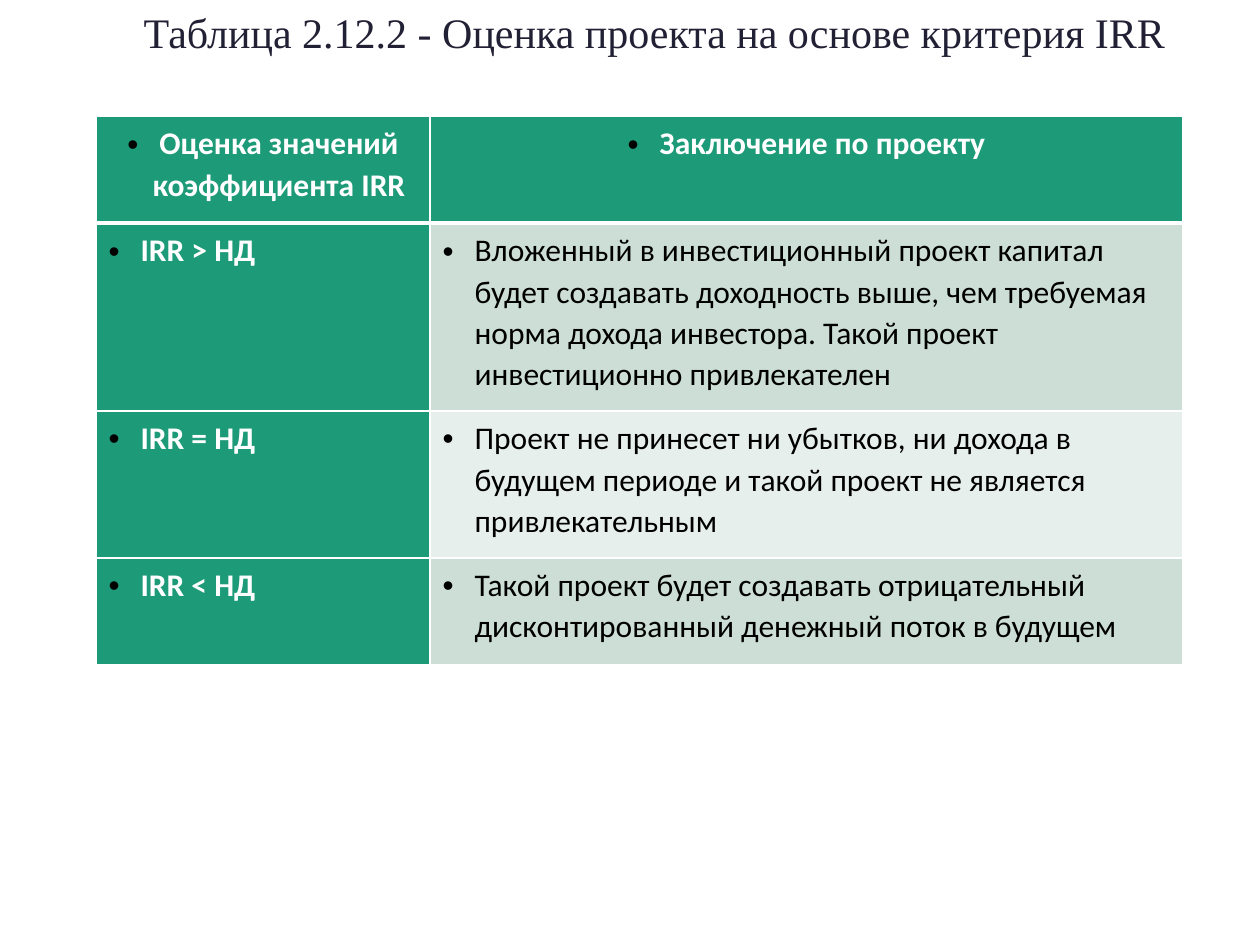
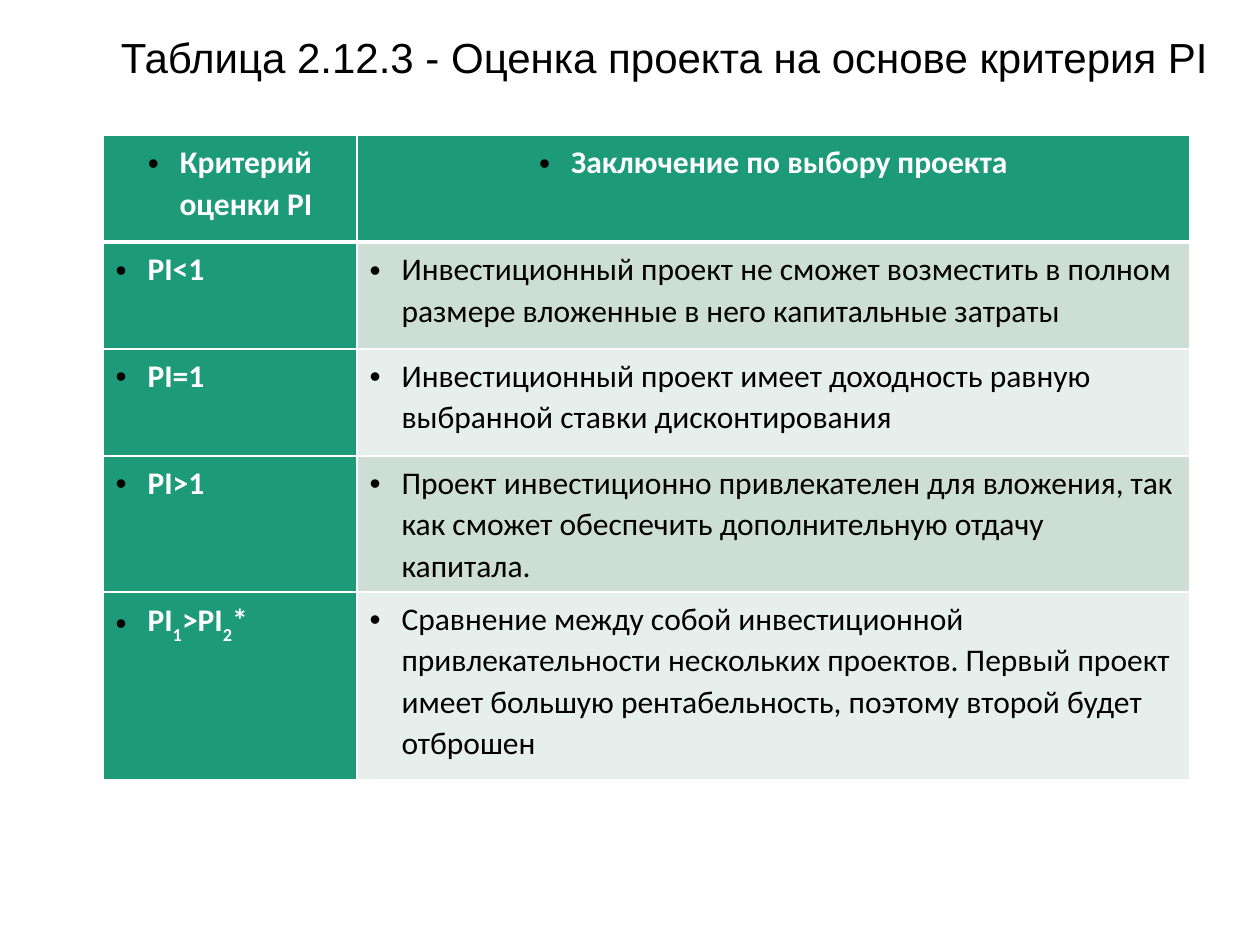
"""Build two slides with tables on judging a project by IRR and PI."""
from dataclasses import dataclass

from lxml.etree import SubElement
from pptx import Presentation
from pptx.dml.color import RGBColor
from pptx.enum.text import MSO_ANCHOR as Anchor, MSO_AUTO_SIZE as AutoSize, PP_ALIGN as Align
from pptx.oxml.ns import qn
from pptx.util import Emu, Pt

PX_PER_INCH = 126
TITLE_ONLY = 5
TITLE_HEIGHT = 63
BULLET_INDENT = 32
TABLE_FONT = "Calibri"
COLORS = {
    "white": "FFFFFF",
    "black": "000000",
    "ink": "212034",
    "green": "1D9A78",
    "band_dark": "CCDED6",
    "band_light": "E7EFEC",
}


@dataclass(frozen=True)
class Piece:
    text: str
    subscript: bool = False


@dataclass(frozen=True)
class Title:
    text: str
    left: int
    top: int
    width: int
    font: str
    color: str


@dataclass(frozen=True)
class Row:
    height: int
    criterion: tuple[Piece, ...]
    conclusion: str


@dataclass(frozen=True)
class CriterionTable:
    left: int
    top: int
    columns: tuple[int, int]
    rows: tuple[Row, ...]


def px(length: int) -> Emu:
    return Emu(round(length * 914400 / PX_PER_INCH))


def rgb(name: str) -> RGBColor:
    return RGBColor.from_string(COLORS[name])


def add_title(slide, title: Title) -> None:
    shape = slide.shapes.title
    shape.left, shape.top = px(title.left), px(title.top)
    shape.width, shape.height = px(title.width), px(TITLE_HEIGHT)
    frame = shape.text_frame
    frame.word_wrap = True
    frame.auto_size = AutoSize.NONE
    frame.vertical_anchor = Anchor.MIDDLE
    paragraph = frame.paragraphs[0]
    paragraph.alignment = Align.CENTER
    run = paragraph.add_run()
    run.text = title.text
    run.font.name, run.font.size = title.font, Pt(24)
    run.font.color.rgb = rgb(title.color)


def add_bullet(paragraph) -> None:
    properties = paragraph._p.get_or_add_pPr()
    properties.set("marL", str(px(BULLET_INDENT)))
    properties.set("indent", str(-px(BULLET_INDENT)))
    color = SubElement(properties, qn("a:buClr"))
    SubElement(color, qn("a:srgbClr"), val=COLORS["black"])
    SubElement(properties, qn("a:buFont"), typeface="Arial")
    SubElement(properties, qn("a:buChar"), char="•")


def add_borders(cell, top: int, bottom: int) -> None:
    properties = cell._tc.get_or_add_tcPr()
    for side, points in (("L", 1), ("R", 1), ("T", top), ("B", bottom)):
        line = SubElement(properties, qn(f"a:ln{side}"), w=str(Pt(points)))
        fill = SubElement(line, qn("a:solidFill"))
        SubElement(fill, qn("a:srgbClr"), val=COLORS["white"])


def fill_cell(cell, pieces: tuple[Piece, ...], row: int, fill: str) -> None:
    add_borders(cell, top=3 if row == 1 else 1, bottom=3 if row == 0 else 1)
    cell.fill.solid()
    cell.fill.fore_color.rgb = rgb(fill)
    paragraph = cell.text_frame.paragraphs[0]
    paragraph.alignment = Align.CENTER if row == 0 else Align.LEFT
    paragraph.line_spacing = 1.07
    add_bullet(paragraph)
    emphasized = fill == "green"
    for piece in pieces:
        run = paragraph.add_run()
        run.text = piece.text
        run.font.name, run.font.size = TABLE_FONT, Pt(18)
        run.font.bold = emphasized
        run.font.color.rgb = rgb("white" if emphasized else "black")
        if piece.subscript:
            run._r.get_or_add_rPr().set("baseline", "-32000")


def add_criterion_table(slide, content: CriterionTable) -> None:
    width = sum(content.columns)
    height = sum(row.height for row in content.rows)
    table = slide.shapes.add_table(
        len(content.rows), len(content.columns),
        px(content.left), px(content.top), px(width), px(height),
    ).table
    for column, column_width in zip(table.columns, content.columns):
        column.width = px(column_width)
    for index, row in enumerate(content.rows):
        table.rows[index].height = px(row.height)
        band = "band_dark" if index % 2 else "band_light"
        fill_cell(table.cell(index, 0), row.criterion, index, "green")
        fill_cell(table.cell(index, 1), (Piece(row.conclusion),), index,
                  band if index else "green")


SLIDES = (
    (
        Title("Таблица 2.12.2 - Оценка проекта на основе критерия IRR",
              126, 0, 1057, "Times New Roman", "ink"),
        CriterionTable(96, 116, (334, 753), (
            Row(107, (Piece("Оценка значений коэффициента IRR"),), "Заключение по проекту"),
            Row(188, (Piece("IRR > НД"),),
                "Вложенный в инвестиционный проект капитал будет создавать доходность выше, "
                "чем требуемая норма дохода инвестора. Такой проект инвестиционно привлекателен"),
            Row(147, (Piece("IRR = НД"),),
                "Проект не принесет ни убытков, ни дохода в будущем периоде "
                "и такой проект не является привлекательным"),
            Row(107, (Piece("IRR < НД"),),
                "Такой проект будет создавать отрицательный дисконтированный "
                "денежный поток в будущем"),
        )),
    ),
    (
        Title("Таблица 2.12.3 - Оценка проекта на основе критерия PI",
              103, 25, 1123, "Arial", "black"),
        CriterionTable(103, 135, (254, 833), (
            Row(107, (Piece("Критерий оценки PI"),), "Заключение по выбору проекта"),
            Row(107, (Piece("PI<1"),),
                "Инвестиционный проект не сможет возместить в полном размере "
                "вложенные в него капитальные затраты"),
            Row(107, (Piece("PI=1"),),
                "Инвестиционный проект имеет доходность равную выбранной ставки дисконтирования"),
            Row(107, (Piece("PI>1"),),
                "Проект инвестиционно привлекателен для вложения, так как сможет обеспечить "
                "дополнительную отдачу капитала."),
            Row(188, (Piece("PI"), Piece("1", True), Piece(">PI"), Piece("2", True), Piece("*")),
                "Сравнение между собой инвестиционной привлекательности нескольких проектов. "
                "Первый проект имеет большую рентабельность, поэтому второй будет отброшен"),
        )),
    ),
)


def main() -> None:
    presentation = Presentation()
    presentation.slide_width, presentation.slide_height = px(1260), px(945)
    for title, table in SLIDES:
        slide = presentation.slides.add_slide(presentation.slide_layouts[TITLE_ONLY])
        add_criterion_table(slide, table)
        add_title(slide, title)
    presentation.save("out.pptx")


if __name__ == "__main__":
    main()
